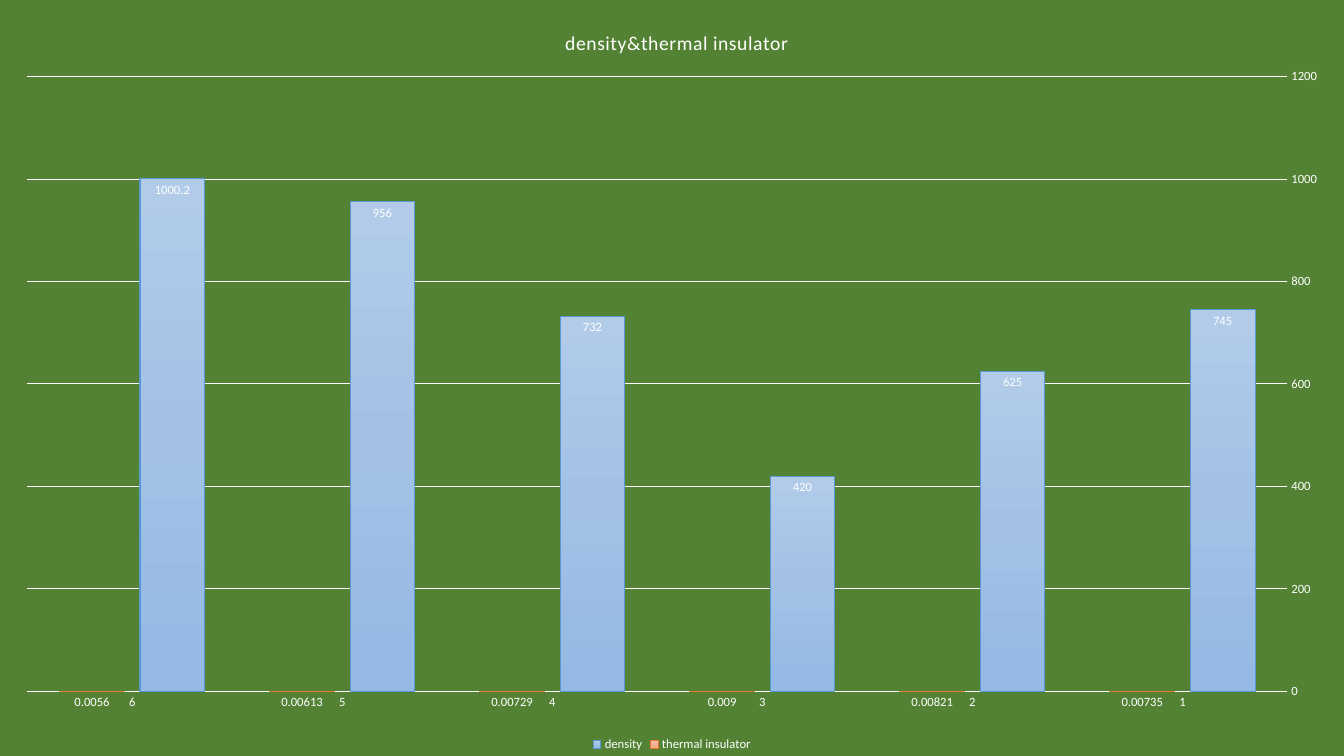
from copy import deepcopy

from lxml import etree
from pptx import Presentation
from pptx.chart.data import CategoryChartData
from pptx.dml.color import RGBColor
from pptx.enum.chart import XL_CHART_TYPE, XL_LABEL_POSITION, XL_LEGEND_POSITION, XL_TICK_MARK
from pptx.oxml.ns import qn
from pptx.util import Inches, Pt

COLUMNS = XL_CHART_TYPE.COLUMN_CLUSTERED
INSIDE_END = XL_LABEL_POSITION.INSIDE_END
BOTTOM = XL_LEGEND_POSITION.BOTTOM
NO_TICK = XL_TICK_MARK.NONE

WIDTH, HEIGHT = 13.33, 7.5
FONT = "Calibri"
WHITE = RGBColor(0xFF, 0xFF, 0xFF)
GREEN = RGBColor(0x54, 0x82, 0x35)
BLUES = [RGBColor(0xB1, 0xCB, 0xE9), RGBColor(0xA3, 0xC1, 0xE5), RGBColor(0x93, 0xB9, 0xE4)]
BLUE_LINE = RGBColor(0x59, 0x98, 0xD0)
ORANGES = [RGBColor(0xF7, 0xBD, 0xA5), RGBColor(0xF5, 0xB1, 0x96), RGBColor(0xF8, 0xA5, 0x82)]
ORANGE_LINE = RGBColor(0xE8, 0x7A, 0x30)

CATEGORIES = ["1", "2", "3", "4", "5", "6"]
SERIES = [
    ("density", [745, 625, 420, 732, 956, 1000.2], BLUES, BLUE_LINE),
    ("thermal insulator", [0.00735, 0.00821, 0.009, 0.00729, 0.00613, 0.0056], ORANGES, ORANGE_LINE),
]


def style_font(font, size):
    font.name = FONT
    font.size = Pt(size)
    font.bold = False
    font.color.rgb = WHITE


def style_line(line, color):
    line.color.rgb = color
    line.width = Pt(0.75)


def set_layout(parent, index, settings):
    for old in parent.findall(qn("c:layout")):
        parent.remove(old)
    layout = etree.Element(qn("c:layout"))
    manual = etree.SubElement(layout, qn("c:manualLayout"))
    for name, value in settings.items():
        etree.SubElement(manual, qn(f"c:{name}")).set("val", str(value))
    parent.insert(index, layout)


def style_series(series, colors, line_color):
    fill = series.format.fill
    fill.gradient()
    fill.gradient_angle = 270
    stop_list = series.format.fill.gradient_stops
    first = next(series._element.iter(qn("a:gs")))
    first.addnext(deepcopy(first))
    stop_list = fill.gradient_stops
    for stop, position, color in zip(stop_list, (0, 0.5, 1), colors):
        stop.position = position
        stop.color.rgb = color
    style_line(series.format.line, line_color)
    labels = series.data_labels
    labels.show_value = True
    labels.position = INSIDE_END
    style_font(labels.font, 9)


def style_title(chart):
    chart.has_title = True
    title = chart.chart_title
    title.include_in_layout = False
    paragraph = title.text_frame.paragraphs[0]
    paragraph.text = "density&thermal insulator"
    style_font(paragraph.font, 14)
    paragraph.runs[0].font._element.set("spc", "30")
    style_font(paragraph.runs[0].font, 14)
    set_layout(title._element, 1, {
        "xMode": "edge", "yMode": "edge", "x": 5.57 / WIDTH, "y": 0.26 / HEIGHT})


def style_axes(chart):
    for axis in (chart.category_axis, chart.value_axis):
        axis.major_tick_mark = axis.minor_tick_mark = NO_TICK
        style_font(axis.tick_labels.font, 9)
    chart.category_axis.reverse_order = True
    style_line(chart.category_axis.format.line, WHITE)
    values = chart.value_axis
    values.minimum_scale, values.maximum_scale, values.major_unit = 0, 1200, 200
    values.format.line.fill.background()
    style_line(values.major_gridlines.format.line, WHITE)


def add_density_chart(slide, left, top, width, height):
    data = CategoryChartData()
    data.categories = CATEGORIES
    for name, values, *_ in SERIES:
        data.add_series(name, values)
    chart = slide.shapes.add_chart(COLUMNS, left, top, width, height, data).chart
    style_font(chart.font, 10)
    style_title(chart)
    style_axes(chart)
    plot = chart.plots[0]
    plot.gap_width = 100
    plot.overlap = -24
    plot.vary_by_categories = False
    for series, (_, _, colors, line_color) in zip(plot.series, SERIES):
        style_series(series, colors, line_color)
    chart.has_legend = True
    chart.legend.position = BOTTOM
    chart.legend.include_in_layout = False
    style_font(chart.legend.font, 9)
    plot_area = next(chart._chartSpace.iter(qn("c:plotArea")))
    set_layout(plot_area, 0, {
        "layoutTarget": "inner", "xMode": "edge", "yMode": "edge",
        "x": 0.27 / WIDTH, "y": 0.76 / HEIGHT, "w": 12.5 / WIDTH, "h": 6.1 / HEIGHT})


def main():
    presentation = Presentation()
    presentation.slide_width = Inches(WIDTH)
    presentation.slide_height = Inches(HEIGHT)
    slide = presentation.slides.add_slide(presentation.slide_layouts[6])
    slide.background.fill.solid()
    slide.background.fill.fore_color.rgb = GREEN
    add_density_chart(slide, 0, 0, presentation.slide_width, presentation.slide_height)
    presentation.save("out.pptx")


if __name__ == "__main__":
    main()
